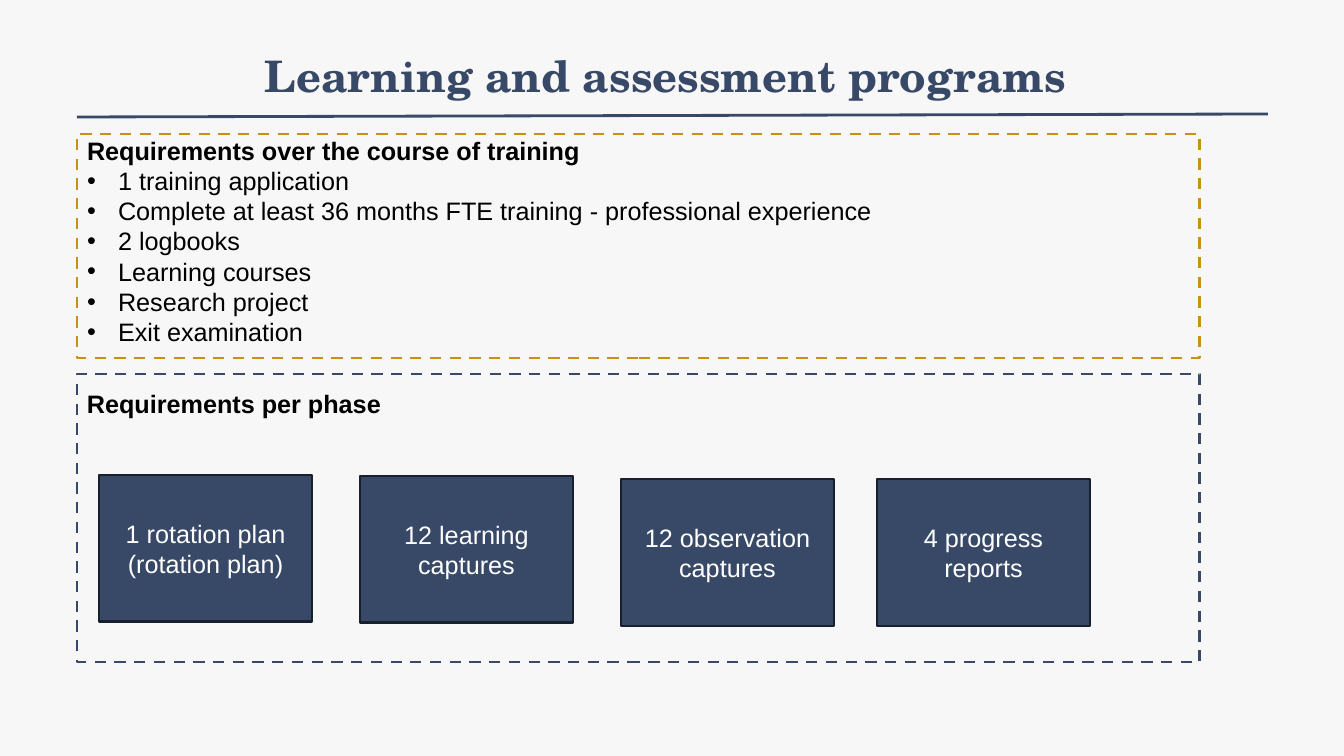
from lxml import etree
from pptx import Presentation
from pptx.dml.color import RGBColor
from pptx.enum.dml import MSO_LINE
from pptx.enum.shapes import MSO_CONNECTOR, MSO_SHAPE
from pptx.enum.text import MSO_ANCHOR, MSO_AUTO_SIZE, PP_ALIGN
from pptx.oxml.ns import qn
from pptx.util import Pt

RECT, STRAIGHT = MSO_SHAPE.RECTANGLE, MSO_CONNECTOR.STRAIGHT
DASH, MIDDLE, TOP = MSO_LINE.DASH, MSO_ANCHOR.MIDDLE, MSO_ANCHOR.TOP
CENTER, LEFT, NO_FIT = PP_ALIGN.CENTER, PP_ALIGN.LEFT, MSO_AUTO_SIZE.NONE

SLIDE_W, SLIDE_H = 1344, 756
SCALE = 12192000 / SLIDE_W
COLORS = {"paper": "F7F7F7", "navy": "384967", "edge": "19202D",
          "gold": "C69214", "black": "000000", "white": "FFFFFF"}
TITLE_FONT = {"name": "TeX Gyre Schola", "size": Pt(31), "bold": True}
HEAD_FONT = {"name": "Arial", "size": Pt(18), "bold": True}
BODY_FONT = {**HEAD_FONT, "bold": False}

TRAINING = ["1 training application",
            "Complete at least 36 months FTE training - professional experience",
            "2 logbooks", "Learning courses", "Research project",
            "Exit examination"]
CARD_W, CARD_H = 213, 147
CARDS = [(99, 475, "1 rotation plan (rotation plan)"),
         (360, 476, "12 learning captures"),
         (621, 479, "12 observation captures"),
         (877, 479, "4 progress reports")]


def px(n):
    return round(n * SCALE)


def rgb(name):
    return RGBColor.from_string(COLORS[name])


def place(sp, x, y, w, h):
    sp.left, sp.top, sp.width, sp.height = map(px, (x, y, w, h))


def setup_frame(tf, anchor):
    tf.word_wrap = True
    tf.auto_size = NO_FIT
    tf.vertical_anchor = anchor


def write(p, text, font, color, align=LEFT):
    p.alignment = align
    p.space_before = Pt(0)
    r = p.add_run()
    r.text = text
    for key, value in font.items():
        setattr(r.font, key, value)
    r.font.color.rgb = rgb(color)


def set_bullet(p, indent=0):
    pPr = p._p.get_or_add_pPr()
    pPr.set("marL", str(px(indent)))
    pPr.set("indent", str(-px(indent)))
    if indent:
        etree.SubElement(pPr, qn("a:buFont")).set("typeface", "Arial")
        etree.SubElement(pPr, qn("a:buChar")).set("char", "•")
    else:
        etree.SubElement(pPr, qn("a:buNone"))


def add_title(s, text):
    sp = s.shapes.title
    place(sp, 161, 29, 1009, 92)
    tf = sp.text_frame
    setup_frame(tf, MIDDLE)
    tf.margin_left = tf.margin_right = px(7)
    tf.margin_top = tf.margin_bottom = px(4)
    write(tf.paragraphs[0], text, TITLE_FONT, "navy", CENTER)


def add_list(s, heading, items):
    sp = s.placeholders[1]
    place(sp, 77, 130, 992, 224)
    tf = sp.text_frame
    setup_frame(tf, TOP)
    set_bullet(tf.paragraphs[0])
    write(tf.paragraphs[0], heading, HEAD_FONT, "black")
    for item in items:
        p = tf.add_paragraph()
        set_bullet(p, 31)
        write(p, item, BODY_FONT, "black")


def add_heading(s, text):
    sp = s.shapes.add_textbox(*map(px, (77, 383, 672, 40)))
    setup_frame(sp.text_frame, TOP)
    write(sp.text_frame.paragraphs[0], text, HEAD_FONT, "black")


def add_rule(s, x1, y1, x2, y2):
    line = s.shapes.add_connector(STRAIGHT, *map(px, (x1, y1, x2, y2)))
    line.line.color.rgb = rgb("navy")
    line.line.width = Pt(2)
    etree.SubElement(line._element.spPr, qn("a:effectLst"))


def add_box(s, x, y, w, h, edge):
    sp = s.shapes.add_shape(RECT, *map(px, (x, y, w, h)))
    sp.shadow.inherit = False
    sp.line.color.rgb = rgb(edge)
    sp.line.width = Pt(2)
    return sp


def add_dashed_frame(s, y, h, edge):
    sp = add_box(s, 77, y, 1123, h, edge)
    sp.fill.background()
    sp.line.dash_style = DASH


def add_card(s, x, y, text):
    sp = add_box(s, x, y, CARD_W, CARD_H, "edge")
    sp.fill.solid()
    sp.fill.fore_color.rgb = rgb("navy")
    setup_frame(sp.text_frame, MIDDLE)
    write(sp.text_frame.paragraphs[0], text, BODY_FONT, "white", CENTER)


def main():
    prs = Presentation()
    prs.slide_width, prs.slide_height = px(SLIDE_W), px(SLIDE_H)
    s = prs.slides.add_slide(prs.slide_layouts[1])
    s.background.fill.solid()
    s.background.fill.fore_color.rgb = rgb("paper")

    # Title and rule
    add_title(s, "Learning and assessment programs")
    add_rule(s, 77, 117, 1268, 114)

    # Whole-training requirements
    add_dashed_frame(s, 134, 224, "gold")
    add_list(s, "Requirements over the course of training", TRAINING)

    # Requirements for each phase
    add_dashed_frame(s, 374, 288, "navy")
    add_heading(s, "Requirements per phase")
    for x, y, text in CARDS:
        add_card(s, x, y, text)

    prs.save("out.pptx")


if __name__ == "__main__":
    main()
